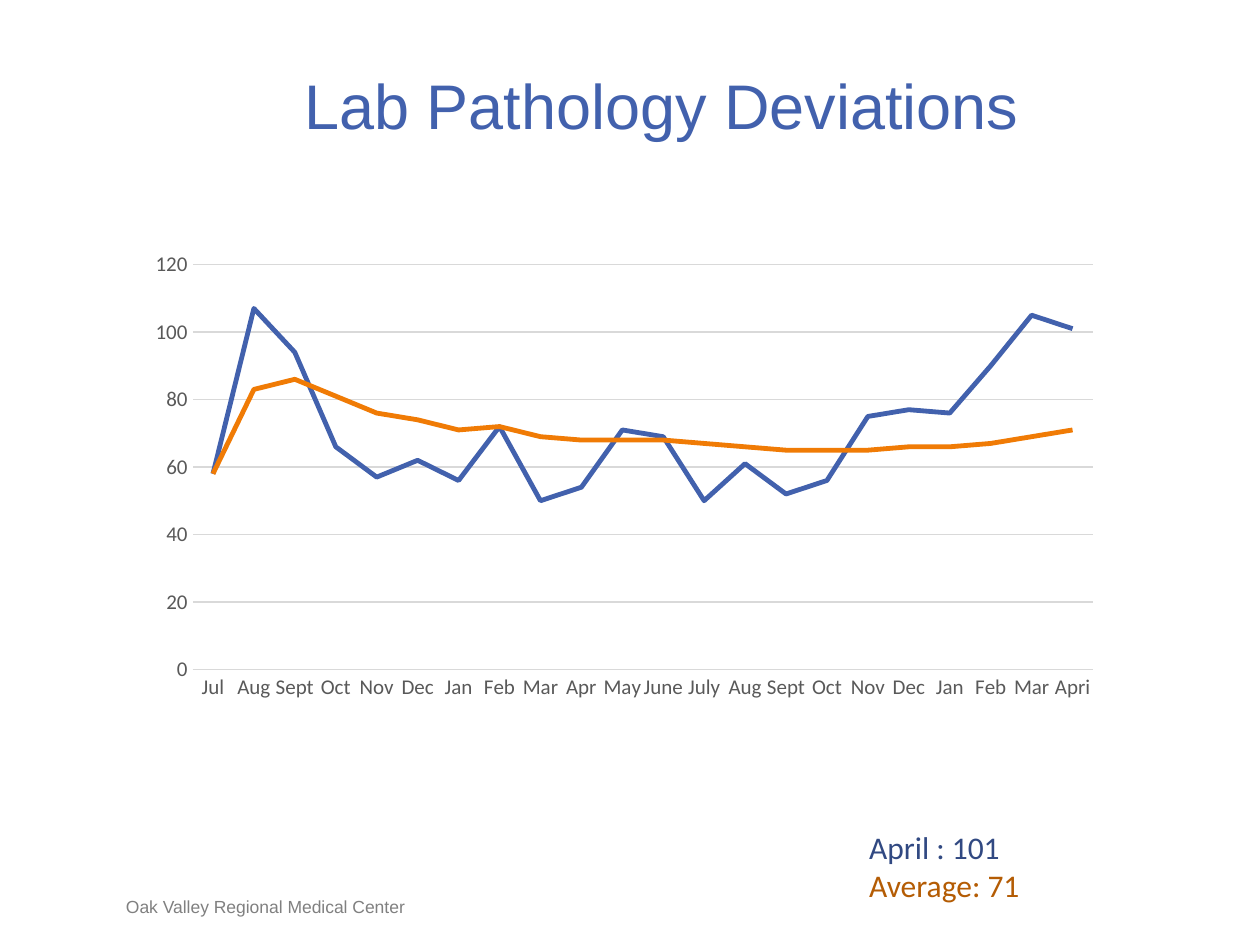
from pptx import Presentation
from pptx.chart.data import CategoryChartData
from pptx.dml.color import RGBColor
from pptx.enum.chart import XL_CHART_TYPE, XL_TICK_MARK
from pptx.enum.text import MSO_ANCHOR, PP_ALIGN
from pptx.util import Inches, Pt

LINE_CHART = XL_CHART_TYPE.LINE
NO_TICK = XL_TICK_MARK.NONE
TOP, BOTTOM = MSO_ANCHOR.TOP, MSO_ANCHOR.BOTTOM
LEFT, CENTER = PP_ALIGN.LEFT, PP_ALIGN.CENTER

BLUE = RGBColor(0x42, 0x61, 0xAD)
ORANGE = RGBColor(0xF0, 0x7B, 0x05)
DARK_BLUE = RGBColor(0x31, 0x49, 0x82)
DARK_ORANGE = RGBColor(0xB4, 0x5C, 0x04)
GREY = RGBColor(0x80, 0x80, 0x80)
AXIS_GREY = RGBColor(0x59, 0x59, 0x59)
RULE_GREY = RGBColor(0xD9, 0xD9, 0xD9)

MONTHS = ["Jul", "Aug", "Sept", "Oct", "Nov", "Dec", "Jan", "Feb", "Mar", "Apr", "May",
          "June", "July", "Aug", "Sept", "Oct", "Nov", "Dec", "Jan", "Feb", "Mar", "Apri"]
DEVIATIONS = [58, 107, 94, 66, 57, 62, 56, 72, 50, 54, 71,
              69, 50, 61, 52, 56, 75, 77, 76, 90, 105, 101]
AVERAGES = [58, 83, 86, 81, 76, 74, 71, 72, 69, 68, 68,
            68, 67, 66, 65, 65, 65, 66, 66, 67, 69, 71]

deck = Presentation()
deck.slide_width, deck.slide_height = Inches(10), Inches(7.5)
slide = deck.slides.add_slide(deck.slide_layouts[6])


def place(left, top, width, height):
    return (Inches(10 * left), Inches(7.5 * top), Inches(10 * width), Inches(7.5 * height))


def set_font(font, name, size, color):
    for attribute, value in {"name": name, "size": Pt(size)}.items():
        setattr(font, attribute, value)
    font.color.rgb = color


texts = [
    ((0.1, 0.95, 0.32, 0.02), 0, BOTTOM, LEFT, "Arial", 10,
     [("Oak Valley Regional Medical Center", GREY)]),
    ((0.1, 0.07, 0.85, 0.08), 0, TOP, CENTER, "Arial", 36,
     [("Lab Pathology Deviations", BLUE)]),
    ((0.68, 0.87, 0.2, 0.09), 0.1, TOP, LEFT, "Calibri", 18,
     [("April : 101", DARK_BLUE), ("Average: 71", DARK_ORANGE)]),
]
for area, inset, anchor, alignment, face, size, lines in texts:
    frame = slide.shapes.add_textbox(*place(*area)).text_frame
    layout = {
        "word_wrap": True,
        "vertical_anchor": anchor,
        "margin_left": Inches(inset),
        "margin_right": Inches(inset),
        "margin_top": Inches(inset / 2),
        "margin_bottom": Inches(inset / 2),
    }
    for attribute, value in layout.items():
        setattr(frame, attribute, value)
    for index, (wording, color) in enumerate(lines):
        paragraph = frame.add_paragraph() if index else frame.paragraphs[0]
        paragraph.alignment = alignment
        run = paragraph.add_run()
        run.text = wording
        set_font(run.font, face, size, color)

history = CategoryChartData()
history.categories = MONTHS
history.add_series("Series 1", DEVIATIONS)
history.add_series("Series 2", AVERAGES)
trend = slide.shapes.add_chart(LINE_CHART, *place(0.108, 0.257, 0.775, 0.493), history).chart
trend.has_legend = False
trend.has_title = False
trend.font.name, trend.font.size = "Calibri", Pt(10)
trend.plots[0].vary_by_categories = False

for axis in (trend.category_axis, trend.value_axis):
    axis.major_tick_mark = axis.minor_tick_mark = NO_TICK
    set_font(axis.tick_labels.font, "Calibri", 12, AXIS_GREY)

months_line = trend.category_axis.format.line
months_line.color.rgb, months_line.width = RULE_GREY, Pt(1)

scale = trend.value_axis
for attribute, value in {"minimum_scale": 0, "maximum_scale": 120, "major_unit": 20}.items():
    setattr(scale, attribute, value)
scale.format.line.fill.background()
grid = scale.major_gridlines.format.line
grid.color.rgb, grid.width = RULE_GREY, Pt(0.75)

for series, color in zip(trend.plots[0].series, (BLUE, ORANGE)):
    series.smooth = False
    series.format.line.color.rgb = color
    series.format.line.width = Pt(2.75)

deck.save("out.pptx")
